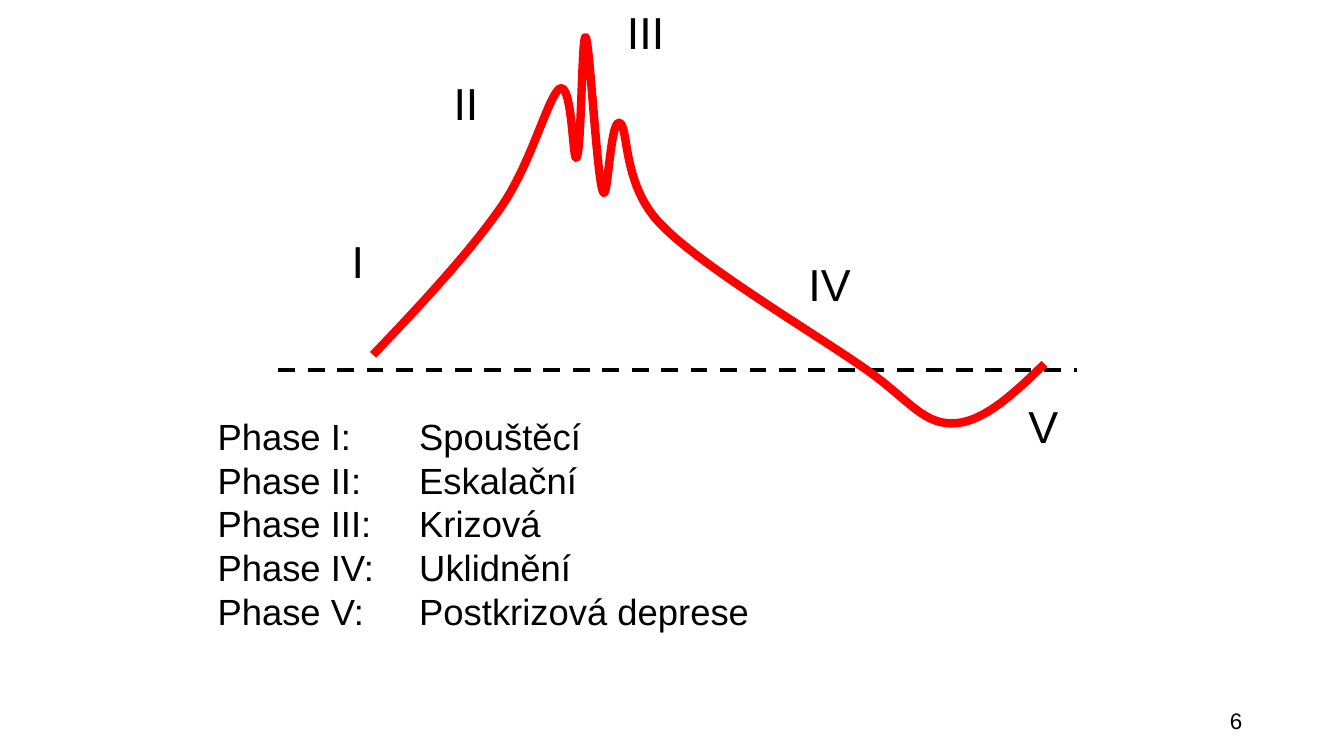
from lxml import etree
from pptx import Presentation
from pptx.dml.color import RGBColor
from pptx.enum.dml import MSO_LINE
from pptx.enum.shapes import MSO_CONNECTOR
from pptx.enum.text import MSO_ANCHOR, PP_ALIGN
from pptx.oxml.ns import qn
from pptx.util import Inches, Pt

STRAIGHT = MSO_CONNECTOR.STRAIGHT
DASH = MSO_LINE.DASH
MIDDLE, TOP = MSO_ANCHOR.MIDDLE, MSO_ANCHOR.TOP
LEFT, RIGHT = PP_ALIGN.LEFT, PP_ALIGN.RIGHT
BLACK = RGBColor(0x00, 0x00, 0x00)
RED = RGBColor(0xFF, 0x00, 0x00)
FONT = "Arial"

# Content: phase labels as (text, left, top, width)
PHASE_LABELS = [
    ("I", 3.39, 2.27, 0.62),
    ("II", 4.4, 0.7, 0.75),
    ("III", 6.12, 0, 1.17),
    ("IV", 7.92, 2.5, 0.75),
    ("V", 10.1, 3.91, 0.75),
]
PHASES = [
    ("I", "Spouštěcí"),
    ("II", "Eskalační"),
    ("III", "Krizová"),
    ("IV", "Uklidnění"),
    ("V", "Postkrizová deprese"),
]
NAME_TAB = 2
SLIDE_NUMBER = "6"

# Crisis curve: start, then two control points and an end for each Bézier segment
CURVE_START = (3.7, 3.52)
CURVE_SEGMENTS = [
    ((4.18, 3.02), (4.65, 2.51), (4.96, 2.07)),
    ((5.27, 1.63), (5.43, 0.97), (5.55, 0.88)),
    ((5.68, 0.8), (5.68, 1.65), (5.72, 1.56)),
    ((5.77, 1.48), (5.77, 0.31), (5.81, 0.37)),
    ((5.85, 0.43), (5.92, 1.76), (5.98, 1.9)),
    ((6.03, 2.04), (6.05, 1.16), (6.15, 1.22)),
    ((6.24, 1.28), (6.17, 1.85), (6.57, 2.24)),
    ((6.96, 2.64), (8.03, 3.28), (8.51, 3.61)),
    ((8.99, 3.93), (9.13, 4.2), (9.44, 4.2)),
    ((9.75, 4.2), (10.06, 3.9), (10.36, 3.61)),
]


def add_text(slide, lines, box, size, wrap=True, align=LEFT, anchor=TOP):
    text_box = slide.shapes.add_textbox(*(Inches(value) for value in box))
    frame = text_box.text_frame
    frame.word_wrap = wrap
    frame.vertical_anchor = anchor
    frame.text = "\n".join(lines)
    for paragraph in frame.paragraphs:
        paragraph.alignment = align
        paragraph.font.name = FONT
        paragraph.font.size = Pt(size)
        paragraph.font.color.rgb = BLACK
    return frame


def set_tab(paragraph, position):
    properties = paragraph._p.get_or_add_pPr()
    tab_list = etree.Element(qn("a:tabLst"))
    etree.SubElement(tab_list, qn("a:tab"), pos=str(Inches(position)), algn="l")
    properties.find(qn("a:defRPr")).addprevious(tab_list)


def add_curve(slide, start, segments):
    builder = slide.shapes.build_freeform(*(Inches(value) for value in start))
    builder.add_line_segments(
        [(Inches(x), Inches(y)) for segment in segments for x, y in segment], close=False)
    curve = builder.convert_to_shape()

    # Join every three straight pieces into one Bézier segment
    pieces = list(curve._element.iter(qn("a:lnTo")))
    for index in range(0, len(pieces), 3):
        bezier = etree.Element(qn("a:cubicBezTo"))
        pieces[index].addprevious(bezier)
        for piece in pieces[index:index + 3]:
            bezier.append(piece[0])
            piece.getparent().remove(piece)
    return curve


def main():
    presentation = Presentation()
    presentation.slide_width = Inches(13.33)
    presentation.slide_height = Inches(7.5)
    slide = presentation.slides.add_slide(presentation.slide_layouts[6])

    # Dashed baseline
    baseline = slide.shapes.add_connector(
        STRAIGHT, Inches(2.76), Inches(3.67), Inches(10.68), Inches(3.67))
    baseline.line.color.rgb = BLACK
    baseline.line.width = Pt(3)
    baseline.line.dash_style = DASH
    etree.SubElement(baseline._element.spPr, qn("a:effectLst"))

    # Phase labels along the curve
    for label, left, top, width in PHASE_LABELS:
        add_text(slide, [label], (left, top, width, 0.63), 32)

    # Phase names
    lines = [f"Phase {numeral}:\t{name}" for numeral, name in PHASES]
    names = add_text(slide, lines, (2.06, 4.06, 5.53, 2.29), 26, wrap=False)
    for paragraph in names.paragraphs:
        set_tab(paragraph, NAME_TAB)

    # Crisis curve
    curve = add_curve(slide, CURVE_START, CURVE_SEGMENTS)
    curve.shadow.inherit = False
    curve.fill.background()
    curve.line.color.rgb = RED
    curve.line.width = Pt(6)

    # Slide number
    add_text(slide, [SLIDE_NUMBER], (9.42, 6.95, 3, 0.4), 16, align=RIGHT, anchor=MIDDLE)

    presentation.save("out.pptx")


if __name__ == "__main__":
    main()
